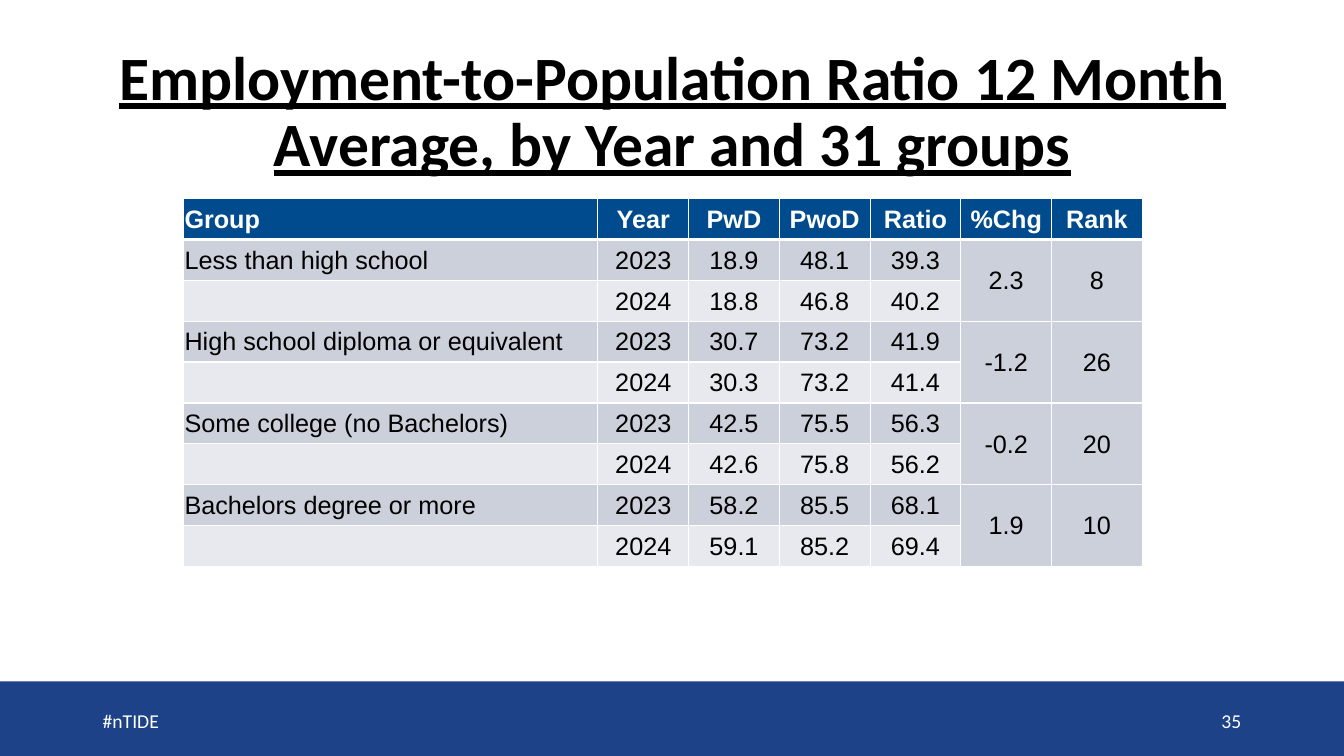
from dataclasses import dataclass

from lxml import etree
from pptx import Presentation
from pptx.dml.color import RGBColor
from pptx.enum.shapes import MSO_SHAPE
from pptx.enum.text import MSO_ANCHOR, MSO_AUTO_SIZE, PP_ALIGN
from pptx.oxml.ns import qn
from pptx.util import Inches, Pt

LEFT, CENTER, RIGHT = PP_ALIGN.LEFT, PP_ALIGN.CENTER, PP_ALIGN.RIGHT
MIDDLE = MSO_ANCHOR.MIDDLE
NO_FIT = MSO_AUTO_SIZE.NONE
RECT = MSO_SHAPE.RECTANGLE
TITLE_ONLY = 5


@dataclass(frozen=True)
class Theme:
    white: str = "FFFFFF"
    black: str = "000000"
    band: str = "1D4288"
    head: str = "004B8D"
    dark: str = "CCD0DB"
    light: str = "E7E9EE"
    main: str = "Calibri"
    grid: str = "Arial"
    title: int = 44
    cell: int = 18
    foot: int = 14


THEME = Theme()

HEADS = ["Group", "Year", "PwD", "PwoD", "Ratio", "%Chg", "Rank"]
# Group name, change, rank, then one row of values per year
GROUPS = [
    ("Less than high school", "2.3", "8",
     [("2023", "18.9", "48.1", "39.3"), ("2024", "18.8", "46.8", "40.2")]),
    ("High school diploma or equivalent", "-1.2", "26",
     [("2023", "30.7", "73.2", "41.9"), ("2024", "30.3", "73.2", "41.4")]),
    ("Some college (no Bachelors)", "-0.2", "20",
     [("2023", "42.5", "75.5", "56.3"), ("2024", "42.6", "75.8", "56.2")]),
    ("Bachelors degree or more", "1.9", "10",
     [("2023", "58.2", "85.5", "68.1"), ("2024", "59.1", "85.2", "69.4")]),
]


def place(shape, box):
    shape.left, shape.top, shape.width, shape.height = map(Inches, box)


def write(frame, text, color, align=LEFT, **form):
    frame.text = text
    para = frame.paragraphs[0]
    para.alignment = align
    para.font.color.rgb = RGBColor.from_string(color)
    for key, value in form.items():
        setattr(para.font, key, value)
    return para


def add_title(slide, box, text):
    title = slide.shapes.title
    place(title, box)
    frame = title.text_frame
    for key, value in {"word_wrap": True, "auto_size": NO_FIT,
                       "vertical_anchor": MIDDLE}.items():
        setattr(frame, key, value)
    para = write(frame, text, THEME.black, CENTER, name=THEME.main,
                 size=Pt(THEME.title), bold=True, underline=True)
    para.line_spacing = 0.9


def add_footer(slide, box, tag, number):
    # Blue band
    band = slide.shapes.add_shape(RECT, *map(Inches, box))
    band.shadow.inherit = False
    band.fill.solid()
    band.fill.fore_color.rgb = RGBColor.from_string(THEME.band)
    band.line.fill.background()

    # Tag at the left, page number at the right
    left, top, width, _ = box
    inset, wide = 0.92, 3
    for text, x, align in [(tag, left + inset, LEFT),
                           (number, left + width - inset - wide, RIGHT)]:
        label = slide.shapes.add_textbox(
            *map(Inches, (x, top + 0.19, wide, 0.4)))
        frame = label.text_frame
        frame.word_wrap = True
        frame.vertical_anchor = MIDDLE
        write(frame, text, THEME.white, align,
              name=THEME.main, size=Pt(THEME.foot))


def add_edges(cell, widths):
    props = cell._tc.get_or_add_tcPr()
    for spot, (side, width) in enumerate(widths.items()):
        edge = etree.Element(qn("a:ln" + side), w=str(Pt(width)))
        fill = etree.SubElement(edge, qn("a:solidFill"))
        etree.SubElement(fill, qn("a:srgbClr"), val=THEME.white)
        props.insert(spot, edge)


def style_cell(cell, text, fill, color, align, bold, below):
    for key, value in {"margin_left": 0.01, "margin_right": 0.01,
                       "margin_top": 0.01, "margin_bottom": 0}.items():
        setattr(cell, key, Inches(value))
    cell.vertical_anchor = MIDDLE
    cell.fill.solid()
    cell.fill.fore_color.rgb = RGBColor.from_string(fill)
    write(cell.text_frame, text, color, align,
          name=THEME.grid, size=Pt(THEME.cell), bold=bold)
    add_edges(cell, {"L": 1, "R": 1, "T": 1, "B": below})


def add_grid(slide, box):
    # Each group gives two rows; only the first holds its name and merged values
    rows = [HEADS]
    for name, change, rank, (first, second) in GROUPS:
        rows += [[name, *first, change, rank], ["", *second, "", ""]]

    table = slide.shapes.add_table(
        len(rows), len(HEADS), *map(Inches, box)).table
    table.horz_banding = False
    slim = 0.9
    for col in table.columns:
        col.width = Inches(slim)
    table.columns[0].width = Inches(box[2] - slim * (len(HEADS) - 1))

    for r, row in enumerate(rows):
        head = r == 0
        fill = THEME.head if head else THEME.dark if r % 2 else THEME.light
        color = THEME.white if head else THEME.black
        table.rows[r].height = Inches(box[3] / len(rows))
        for c, text in enumerate(row):
            style_cell(table.cell(r, c), text, fill, color,
                       CENTER if c else LEFT, head, 3 if head else 1)

    # Change and rank span both years
    for r in range(1, len(rows), 2):
        for c in (5, 6):
            table.cell(r, c).merge(table.cell(r + 1, c))


def main():
    deck = Presentation()
    deck.slide_width, deck.slide_height = Inches(13.33), Inches(7.5)
    slide = deck.slides.add_slide(deck.slide_layouts[TITLE_ONLY])
    add_footer(slide, (0, 6.76, 13.33, 0.74), "#nTIDE", "35")
    add_title(slide, (0.92, 0.4, 11.5, 1.45),
              "Employment-to-Population Ratio 12 Month Average, "
              "by Year and 31 groups")
    add_grid(slide, (1.82, 1.97, 9.51, 3.65))
    deck.save("out.pptx")


if __name__ == "__main__":
    main()
